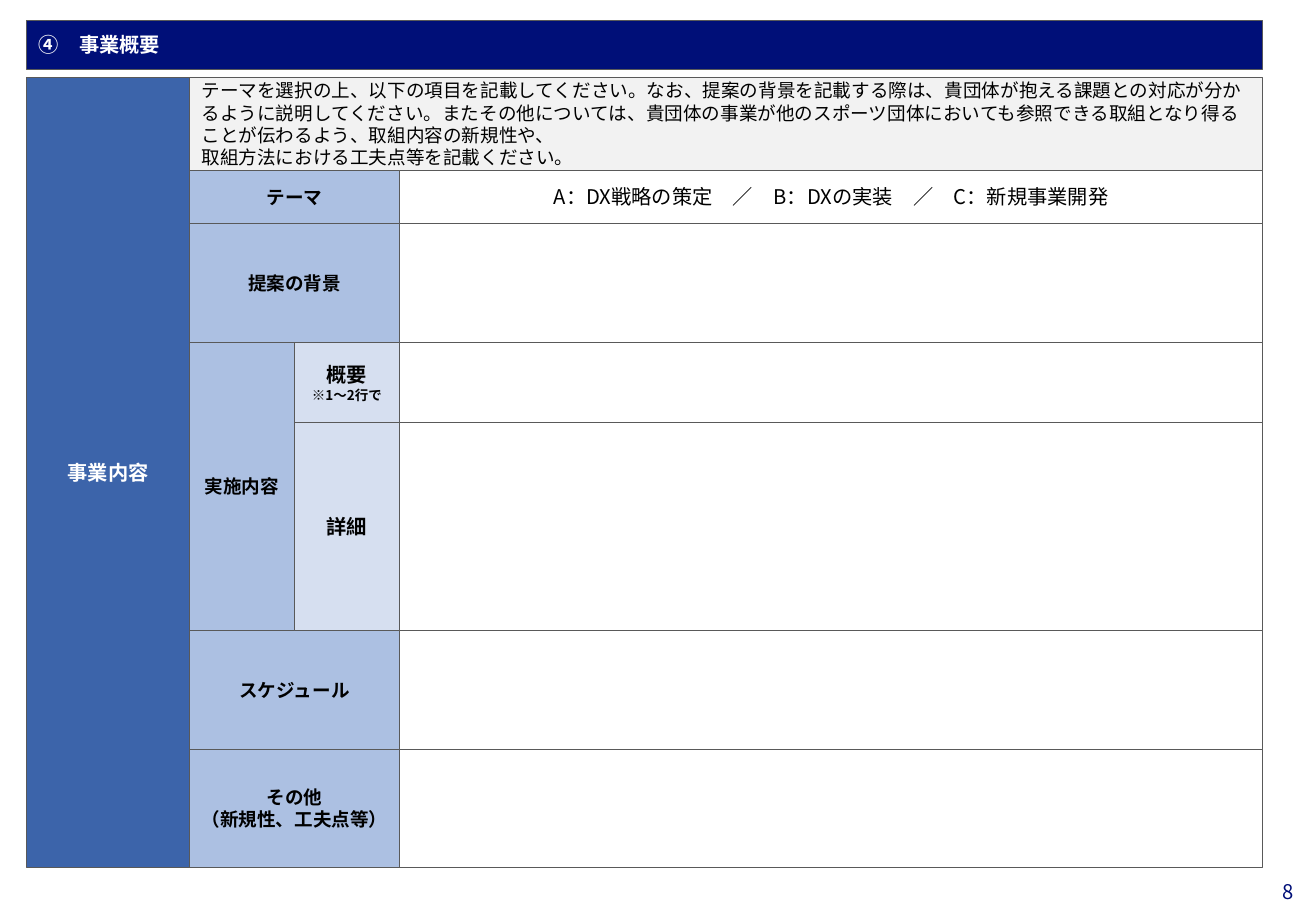
import pptx
import pptx.util
import pptx.dml.color
import pptx.enum.shapes
import pptx.enum.text
import pptx.oxml
import pptx.oxml.ns

Inches = pptx.util.Inches
RGBColor = pptx.dml.color.RGBColor
Align = pptx.enum.text.PP_ALIGN

FONT = "Noto Sans CJK JP"
NAVY = RGBColor(0x00, 0x0F, 0x78)
BLUE = RGBColor(0x3C, 0x64, 0xAA)
LIGHT_BLUE = RGBColor(0xAC, 0xC0, 0xE2)
PALE_BLUE = RGBColor(0xD6, 0xDF, 0xF0)
GRAY = RGBColor(0xF2, 0xF2, 0xF2)
OUTLINE = RGBColor(0x59, 0x59, 0x59)
WHITE = RGBColor(0xFF, 0xFF, 0xFF)
BLACK = RGBColor(0x00, 0x00, 0x00)


def write(frame, lines, color, bold, align):
    frame.word_wrap = True
    frame.vertical_anchor = pptx.enum.text.MSO_ANCHOR.MIDDLE
    for index, (text, size) in enumerate(lines):
        paragraph = frame.add_paragraph() if index else frame.paragraphs[0]
        paragraph.text = text
        paragraph.alignment = align
        paragraph.font.name = FONT
        paragraph.font.size = pptx.util.Pt(size)
        paragraph.font.bold = bold
        paragraph.font.color.rgb = color
        east_asian = pptx.oxml.parse_xml(
            f'<a:ea {pptx.oxml.ns.nsdecls("a")} typeface="{FONT}"/>')
        paragraph.font.fill  
        paragraph._p.pPr.find(pptx.oxml.ns.qn("a:defRPr")).append(east_asian)


def add_cell(left, top, right, bottom, fill, lines=(), color=BLACK, bold=True,
             align=Align.CENTER):
    cell = slide.shapes.add_shape(
        pptx.enum.shapes.MSO_SHAPE.RECTANGLE, Inches(left), Inches(top),
        Inches(right - left), Inches(bottom - top))
    cell.shadow.inherit = False
    cell.fill.solid()
    cell.fill.fore_color.rgb = fill
    cell.line.color.rgb = OUTLINE
    cell.line.width = pptx.util.Pt(0.5)
    write(cell.text_frame, lines, color, bold, align)


deck = pptx.Presentation()
deck.slide_width = Inches(10.83)
deck.slide_height = Inches(7.5)
slide = deck.slides.add_slide(deck.slide_layouts[6])

LEFT, LABEL, SUBLABEL, ENTRY, RIGHT = 0.22, 1.56, 2.42, 3.29, 10.39
GUIDE, THEME, BACKGROUND, SUMMARY, DETAIL, SCHEDULE, OTHER, BOTTOM = (
    0.64, 1.4, 1.84, 2.82, 3.48, 5.19, 6.17, 7.14)

add_cell(LEFT, 0.17, RIGHT, 0.57, NAVY, [("④　事業概要", 12)], WHITE, align=Align.LEFT)
add_cell(LEFT, GUIDE, LABEL, BOTTOM, BLUE, [("事業内容", 12)], WHITE)

guidance = (
    "テーマを選択の上、以下の項目を記載してください。なお、提案の背景を記載する際は、"
    "貴団体が抱える課題との対応が分かるように説明してください。またその他については、"
    "貴団体の事業が他のスポーツ団体においても参照できる取組となり得ることが伝わるよう、"
    "取組内容の新規性や、\v取組方法における工夫点等を記載ください。")
add_cell(LABEL, GUIDE, RIGHT, THEME, GRAY, [(guidance, 11)], bold=False, align=Align.LEFT)

themes = "A：DX戦略の策定　／　B：DXの実装　／　C：新規事業開発"
add_cell(ENTRY, THEME, RIGHT, BACKGROUND, WHITE, [(themes, 12)], bold=False)

for top, bottom in [(BACKGROUND, SUMMARY), (SUMMARY, DETAIL), (DETAIL, SCHEDULE),
                    (SCHEDULE, OTHER), (OTHER, BOTTOM)]:
    add_cell(ENTRY, top, RIGHT, bottom, WHITE)

for top, bottom, right, lines in [
    (THEME, BACKGROUND, ENTRY, ["テーマ"]),
    (BACKGROUND, SUMMARY, ENTRY, ["提案の背景"]),
    (SUMMARY, SCHEDULE, SUBLABEL, ["実施内容"]),
    (SCHEDULE, OTHER, ENTRY, ["スケジュール"]),
    (OTHER, BOTTOM, ENTRY, ["その他", "（新規性、工夫点等）"]),
]:
    add_cell(LABEL, top, right, bottom, LIGHT_BLUE, [(line, 11) for line in lines])

add_cell(SUBLABEL, SUMMARY, ENTRY, DETAIL, PALE_BLUE, [("概要", 12), ("※1～2行で", 8)])
add_cell(SUBLABEL, DETAIL, ENTRY, SCHEDULE, PALE_BLUE, [("詳細", 12)])

page_number = slide.shapes.add_textbox(Inches(10.3), Inches(7.24), Inches(0.53), Inches(0.19))
number_frame = page_number.text_frame
number_frame.margin_left = number_frame.margin_top = number_frame.margin_bottom = 0
number_frame.margin_right = Inches(0.18)
write(number_frame, [("8", 12)], NAVY, False, Align.RIGHT)

deck.save("out.pptx")
